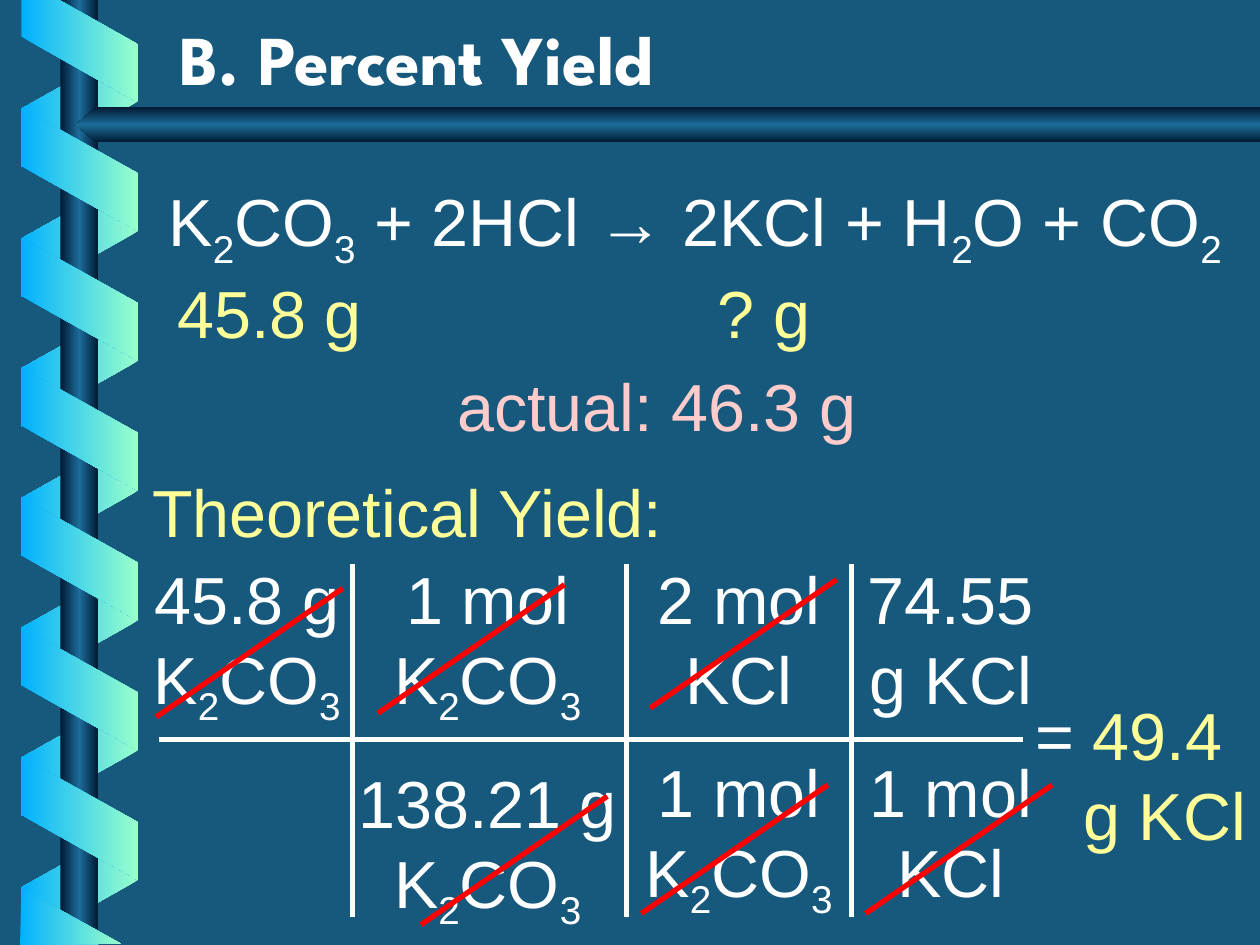
from lxml import etree
from pptx import Presentation
from pptx.dml.color import RGBColor
from pptx.enum.shapes import MSO_CONNECTOR, MSO_SHAPE as SHAPE
from pptx.enum.text import MSO_ANCHOR as ANCHOR, PP_ALIGN as ALIGN
from pptx.oxml import parse_xml
from pptx.oxml.ns import nsdecls, qn
from pptx.util import Inches, Pt

COLORS = {
    "background": "17597D", "white": "FFFFFF", "yellow": "FFFF99",
    "pink": "FFCCCC", "red": "FF0000", "navy": "001932",
    "steel": "1C6D9A", "blue": "01B0FF", "mint": "99FFCC",
}
ROD = ("navy", "steel", "navy")
RIBBON = ("blue", "mint")

# Ribbon: first top, number of turns, rotation, mirrored, gradient
BACK_TURNS = (0.37, 7, 90, True, RIBBON[::-1])
FRONT_TURNS = (0.88, 6, 270, False, RIBBON)
TURN_STEP = 1.03
RIBBON_ENDS = [
    [(0.17, 0), (0.17, 0.29), (1.09, 0.81), (1.09, 0.35), (0.47, 0)],
    [(0.96, 7.49), (0.17, 7.05), (0.16, 7.5)],
]

TITLE = "B. Percent Yield"
# Box, alignment, lines; a line is a list of (text, colour), "_" lowers the next character
LABELS = [
    ((1.18, 1.38, 8.82, 0.9), ALIGN.CENTER,
     [[("K_2CO_3 + 2HCl → 2KCl + H_2O + CO_2 ", "white")]]),
    ((1.14, 2.11, 2, 0.78), ALIGN.CENTER, [[("45.8 g", "yellow")]]),
    ((5.43, 2.11, 1.27, 0.78), ALIGN.CENTER, [[("? g", "yellow")]]),
    ((3.45, 2.85, 3.53, 0.78), ALIGN.CENTER, [[("actual: 46.3 g", "pink")]]),
    ((1.11, 3.69, 8.5, 0.99), ALIGN.LEFT, [[("Theoretical Yield:", "yellow")]]),
    ((8.12, 5.46, 2.28, 2.01), ALIGN.LEFT,
     [[("= ", "white"), ("49.4", "yellow")], [("\tg KCl", "yellow")]]),
]
# Conversion factors: left, width, two lines above the bar, two below
FACTORS = [
    (0.95, 2.02, ["45.8 g", "K_2CO_3"]),
    (2.73, 2.28, ["1 mol", "K_2CO_3", "138.21 g", "K_2CO_3"]),
    (4.94, 1.85, ["2 mol", "KCl", "1 mol", "K_2CO_3"]),
    (6.62, 1.85, ["74.55", "g KCl", "1 mol", "KCl"]),
]
FACTOR_TOP, FACTOR_HEIGHT = 4.38, 2.94
BAR = (1.26, 5.87, 8.12, 5.87)
DIVIDERS = [2.8, 4.97, 6.76]
# Upper right end of each cancelling stroke
STROKES = [(2.72, 4.67), (4.82, 6.32), (4.48, 4.64),
           (6.57, 6.23), (6.64, 4.6), (8.35, 6.23)]
STROKE_SIZE = (1.48, 1.02)


def rgb(name):
    return RGBColor.from_string(COLORS[name])


def paint(s, names, angle=0):
    """Fill with an evenly spaced gradient that stays level when the shape turns."""
    s.shadow.inherit = False
    s.line.fill.background()
    s.fill.background()
    last = len(names) - 1
    stops = "".join(
        f'<a:gs pos="{i * 100000 // last}"><a:srgbClr val="{COLORS[n]}"/></a:gs>'
        for i, n in enumerate(names))
    grad = parse_xml(
        f'<a:gradFill {nsdecls("a")} rotWithShape="0"><a:gsLst>{stops}</a:gsLst>'
        f'<a:lin ang="{angle * 60000}" scaled="0"/></a:gradFill>')
    no_fill = s._element.spPr.find(qn("a:noFill"))
    no_fill.getparent().replace(no_fill, grad)


def add_shape(slide, kind, box, names, angle=0, adj=None, flip=False, rotation=0):
    s = slide.shapes.add_shape(kind, *map(Inches, box))
    if adj is not None:
        s.adjustments[0] = adj
    s.rotation = rotation
    if flip:
        s._element.spPr.find(qn("a:xfrm")).set("flipH", "1")
    paint(s, names, angle)
    return s


def add_turns(slide, top, count, rotation, flip, names):
    for i in range(count):
        add_shape(slide, SHAPE.PARALLELOGRAM, (0.14, top + i * TURN_STEP, 0.98, 0.93),
                  names, adj=0.56, flip=flip, rotation=rotation)


def add_ribbon_end(slide, points):
    start, *rest = [(Inches(x), Inches(y)) for x, y in points]
    fb = slide.shapes.build_freeform(*start)
    fb.add_line_segments(rest, close=True)
    paint(fb.convert_to_shape(), RIBBON)


def add_line(slide, x1, y1, x2, y2, color):
    c = slide.shapes.add_connector(MSO_CONNECTOR.STRAIGHT, *map(Inches, (x1, y1, x2, y2)))
    c.line.color.rgb = rgb(color)
    c.line.width = Pt(3)
    etree.SubElement(c._element.spPr, qn("a:effectLst"))


def add_box(slide, box, anchor=ANCHOR.TOP):
    tf = slide.shapes.add_textbox(*map(Inches, box)).text_frame
    tf.word_wrap = True
    tf.vertical_anchor = anchor
    return tf


def add_run(p, text, color, size=38, font="Arial", lowered=False):
    r = p.add_run()
    r.text = text
    r.font.size = Pt(size)
    r.font.name = font
    r.font.color.rgb = rgb(color)
    if lowered:
        r._r.get_or_add_rPr().set("baseline", "-25000")
    return r


def add_formula(p, text, color):
    first, *others = text.split("_")
    add_run(p, first, color)
    for part in others:
        add_run(p, part[0], color, lowered=True)
        if part[1:]:
            add_run(p, part[1:], color)


def add_label(slide, box, align, lines):
    tf = add_box(slide, box)
    for i, line in enumerate(lines):
        p = tf.add_paragraph() if i else tf.paragraphs[0]
        p.alignment = align
        pPr = p._p.get_or_add_pPr()
        pPr.set("marL", str(Inches(0.38)))
        pPr.set("indent", str(-Inches(0.38)))
        if i == 2:  # first line below the bar
            p.space_before = Pt(19)
        for text, color in line:
            add_formula(p, text, color)
    return tf


def add_title(slide):
    p = add_box(slide, (1.33, 0, 8.5, 0.84), ANCHOR.BOTTOM).paragraphs[0]
    r = add_run(p, TITLE, "white", 40, "League Spartan")
    r.font.bold = True
    r._r.rPr.find(qn("a:solidFill")).addnext(parse_xml(
        f'<a:effectLst {nsdecls("a")}><a:outerShdw dist="35921" dir="2700000">'
        f'<a:srgbClr val="{COLORS["navy"]}"/></a:outerShdw></a:effectLst>'))


def main():
    prs = Presentation()
    prs.slide_width, prs.slide_height = Inches(10), Inches(7.5)
    slide = prs.slides.add_slide(prs.slide_layouts[6])
    slide.background.fill.solid()
    slide.background.fill.fore_color.rgb = rgb("background")

    add_turns(slide, *BACK_TURNS)
    add_shape(slide, SHAPE.RECTANGLE, (0.48, 0, 0.3, 7.5), ROD)
    add_turns(slide, *FRONT_TURNS)
    for points in RIBBON_ENDS:
        add_ribbon_end(slide, points)
    add_shape(slide, SHAPE.PENTAGON, (0.6, 0.85, 9.4, 0.28), ROD,
              angle=90, adj=0.59, flip=True)

    add_title(slide)
    for left, width, lines in FACTORS:
        add_label(slide, (left, FACTOR_TOP, width, FACTOR_HEIGHT), ALIGN.CENTER,
                  [[(text, "white")] for text in lines])
    add_line(slide, *BAR, "white")
    for x in DIVIDERS:
        add_line(slide, x, 4.48, x, 7.28, "white")
    for box, align, lines in LABELS:
        add_label(slide, box, align, lines)
    dx, dy = STROKE_SIZE
    for x, y in STROKES:
        add_line(slide, x, y, x - dx, y + dy, "red")
    prs.save("out.pptx")


if __name__ == "__main__":
    main()
